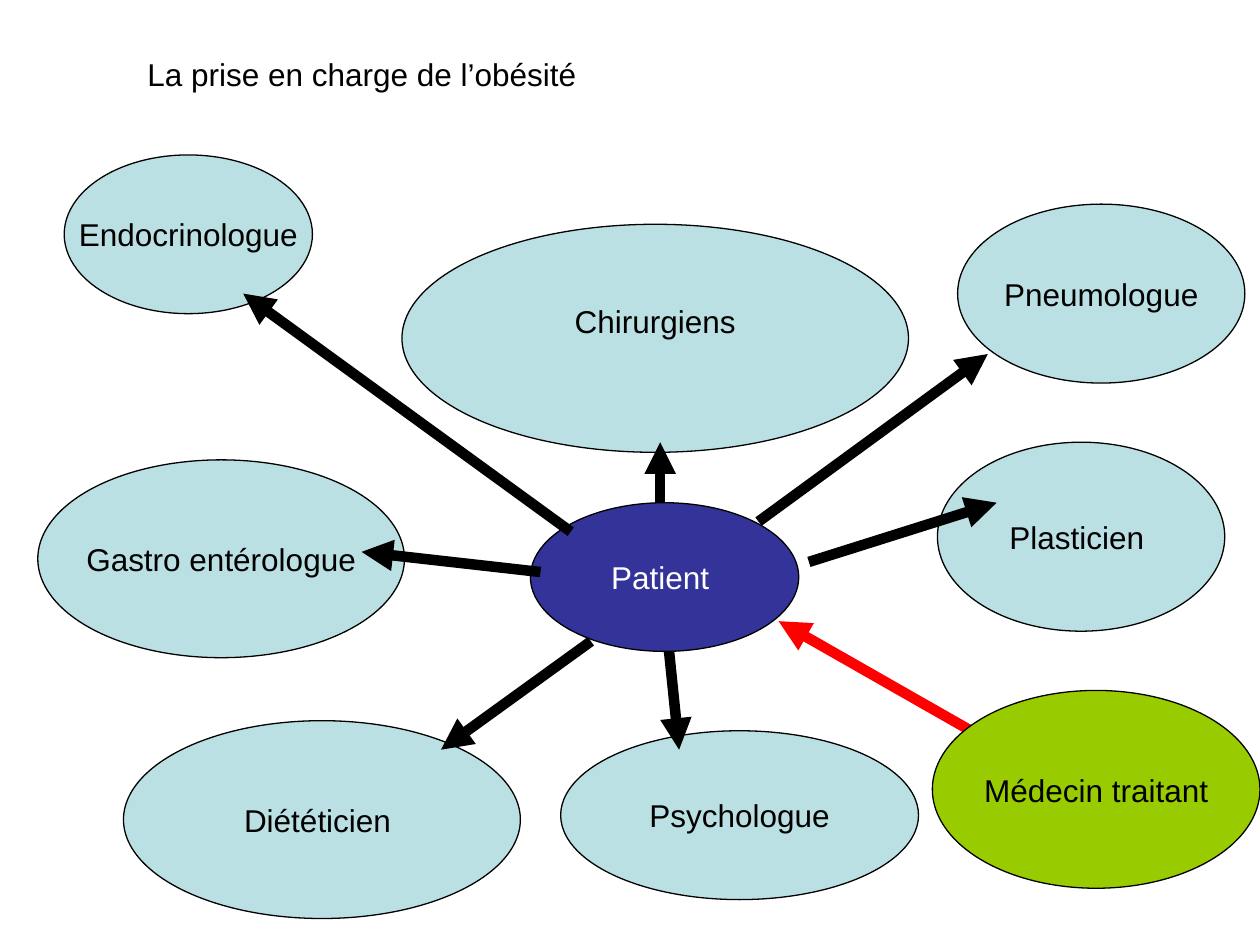
from pptx import Presentation
from pptx.dml.color import RGBColor
from pptx.enum.shapes import MSO_CONNECTOR as Conn, MSO_SHAPE as Kind
from pptx.enum.text import MSO_ANCHOR as Anchor, MSO_AUTO_SIZE as Auto, PP_ALIGN as Align
from pptx.oxml.ns import qn
from pptx.util import Inches, Pt
from lxml.etree import SubElement

BLACK = RGBColor(0x00, 0x00, 0x00)
WHITE = RGBColor(0xFF, 0xFF, 0xFF)
PALE = RGBColor(0xBB, 0xE0, 0xE3)
NAVY = RGBColor(0x33, 0x33, 0x99)
GREEN = RGBColor(0x99, 0xCC, 0x00)
RED = RGBColor(0xFF, 0x00, 0x00)

PAD = Inches(0.05)
FRAME = {"word_wrap": False, "auto_size": Auto.SHAPE_TO_FIT_TEXT,
         "margin_left": PAD, "margin_right": PAD,
         "margin_top": PAD, "margin_bottom": PAD}
FONT = {"name": "Arial", "size": Pt(18)}

# text, ellipse box, label size, label shift from the centre
CARERS = [
    ("Chirurgiens", (3.19, 1.78, 4.02, 1.81), (1.46, 0.68), -0.14),
    ("Gastro entérologue", (0.3, 3.65, 2.91, 1.57), (2.32, 0.68), 0),
    ("Plasticien ", (7.44, 3.51, 2.28, 1.5), (1.32, 0.68), 0),
    ("Diététicien ", (0.98, 5.72, 3.15, 1.57), (1.42, 0.68), 0),
    ("Psychologue", (4.45, 5.8, 2.84, 1.34), (1.61, 0.68), 0),
    ("Pneumologue", (7.6, 1.62, 2.28, 1.42), (1.73, 0.68), 0),
    ("Endocrinologue", (0.51, 1.23, 1.97, 1.26), (1.92, 0.68), 0),
]
PATIENT = ("Patient ", (4.21, 3.99, 2.13, 1.18), (0.96, 0.38), 0)
DOCTOR = ("Médecin traitant", (7.4, 5.48, 2.6, 1.57), (1.89, 0.38), 0)

# start and tip of each arrow from the patient
PATHS = [
    ((4.53, 4.22), (1.93, 2.33)),
    ((6.42, 4.46), (7.91, 3.99)),
    ((4.29, 4.54), (2.87, 4.38)),
    ((4.69, 5.09), (3.5, 5.95)),
    ((5.31, 5.17), (5.39, 5.95)),
    ((5.24, 3.99), (5.24, 3.51)),
    ((6.02, 4.14), (7.84, 2.81)),
]
REFERRAL = ((6.18, 4.93), (8.39, 6.19))


def set_all(item, values):
    for key, value in values.items():
        setattr(item, key, value)


def add_text(shapes, text, box, color=BLACK, align=Align.LEFT, anchor=Anchor.TOP):
    frame = shapes.add_textbox(*map(Inches, box)).text_frame
    set_all(frame, FRAME)
    frame.vertical_anchor = anchor
    para = frame.paragraphs[0]
    para.alignment = align
    run = para.add_run()
    run.text = text
    set_all(run.font, FONT)
    run.font.color.rgb = color


def add_node(slide, text, box, size, shift, fill=PALE, color=BLACK):
    """Group an ellipse with a label centred on it, moved down by shift."""
    group = slide.shapes.add_group_shape()
    oval = group.shapes.add_shape(Kind.OVAL, *map(Inches, box))
    oval.shadow.inherit = False
    oval.fill.solid()
    oval.fill.fore_color.rgb = fill
    oval.line.color.rgb = BLACK
    oval.line.width = Pt(0.75)
    left, top, width, height = box
    wide, high = size
    spot = (left + (width - wide) / 2, top + (height - high) / 2 + shift, wide, high)
    add_text(group.shapes, text, spot, color, Align.CENTER, Anchor.MIDDLE)


def add_arrow(slide, start, tip, color=BLACK, ends=("tailEnd",)):
    line = slide.shapes.add_connector(Conn.STRAIGHT, *map(Inches, start + tip))
    line.line.color.rgb = color
    line.line.width = Pt(6)
    stroke = line.line._get_or_add_ln()
    for end in ends:
        SubElement(stroke, qn("a:" + end), type="triangle")
    SubElement(line._element.spPr, qn("a:effectLst"))


def main():
    deck = Presentation()
    deck.slide_width, deck.slide_height = Inches(10), Inches(7.5)
    slide = deck.slides.add_slide(deck.slide_layouts[6])
    add_text(slide.shapes, "La prise en charge de l’obésité", (1.12, 0.39, 3.59, 0.38))
    for carer in CARERS:
        add_node(slide, *carer)
    add_node(slide, *PATIENT, fill=NAVY, color=WHITE)
    for path in PATHS:
        add_arrow(slide, *path)
    add_arrow(slide, *REFERRAL, color=RED, ends=("headEnd", "tailEnd"))
    add_node(slide, *DOCTOR, fill=GREEN)
    deck.save("out.pptx")


if __name__ == "__main__":
    main()
